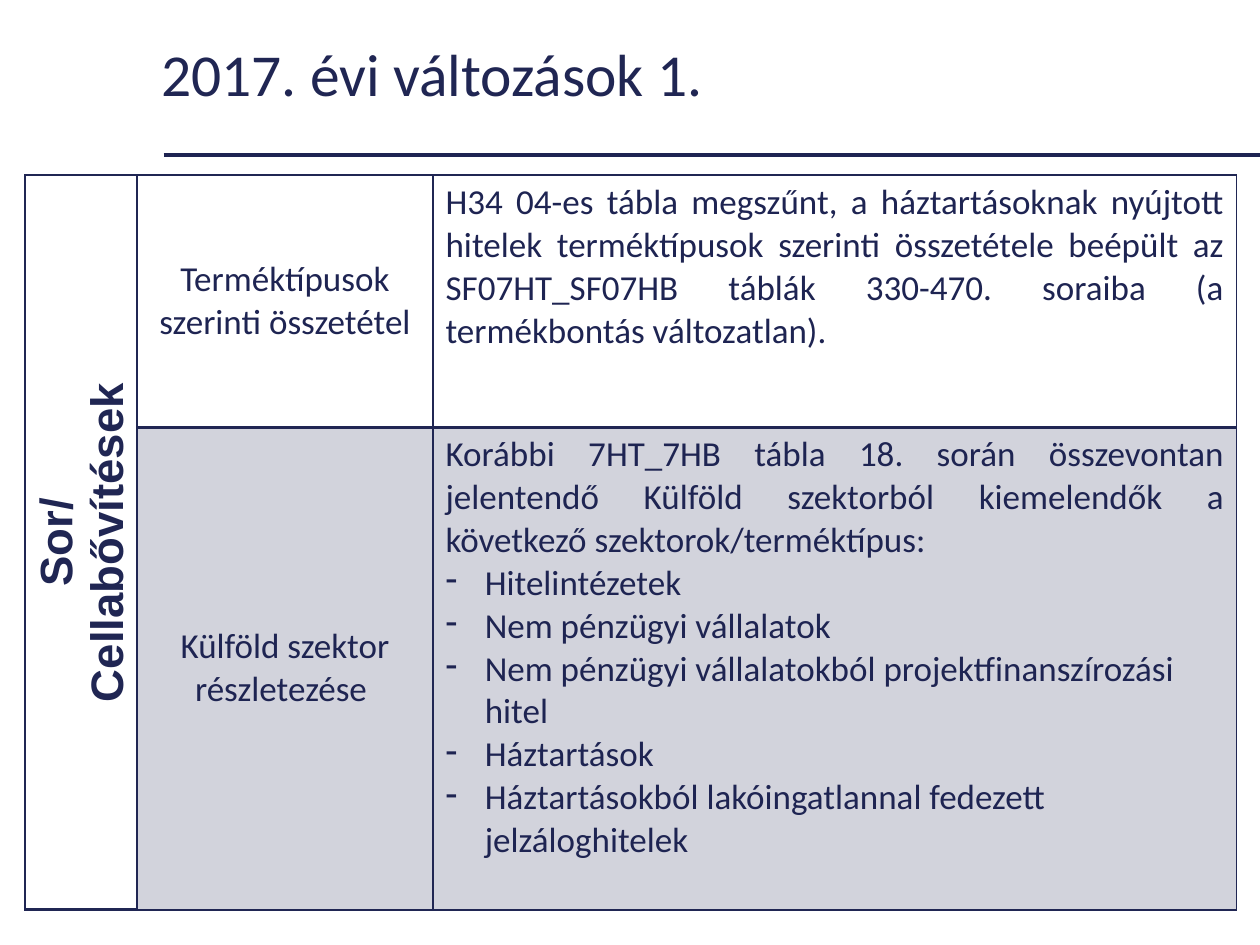
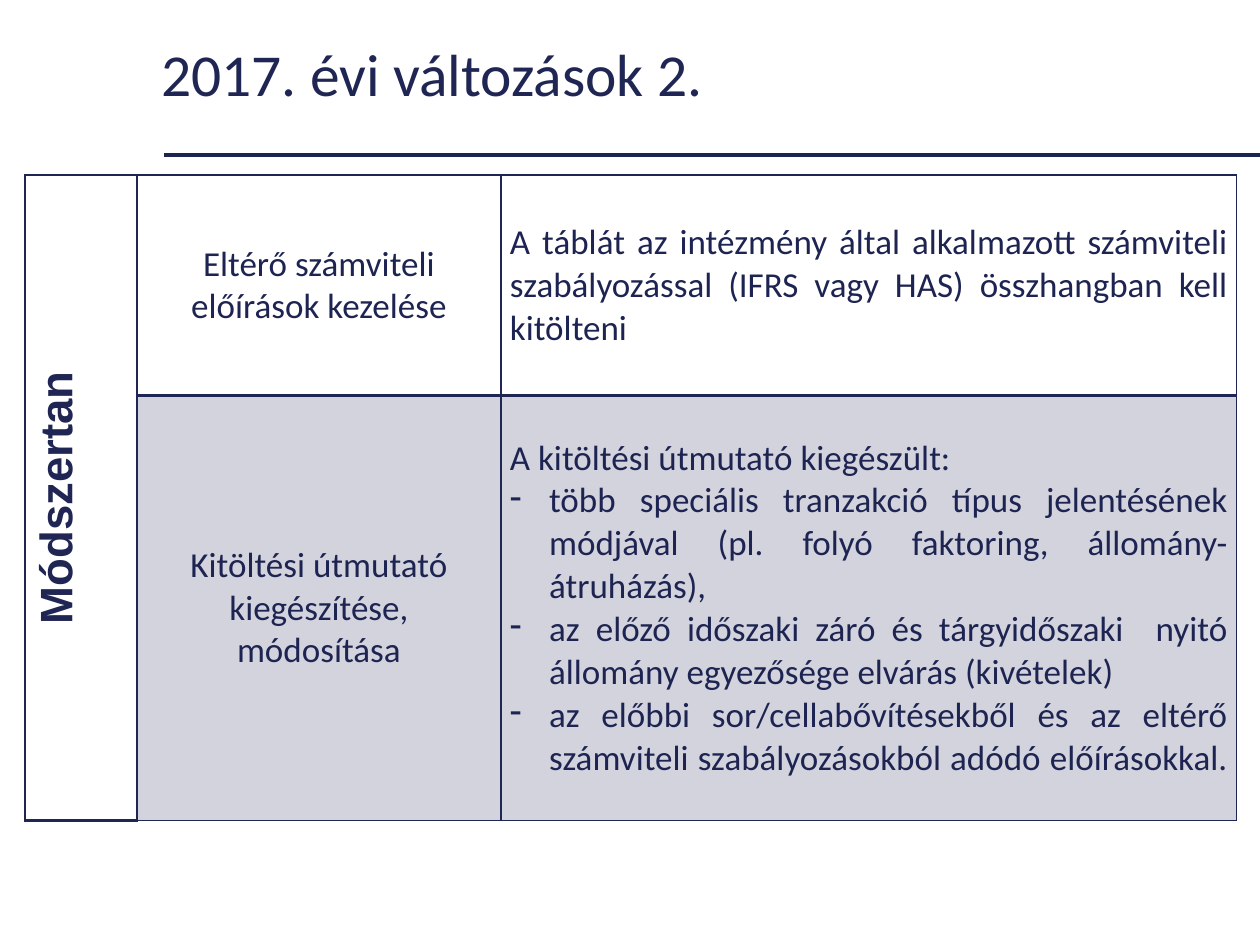
from lxml import etree
from pptx import Presentation
from pptx.dml.color import RGBColor
from pptx.enum import shapes, text
from pptx.oxml import ns
from pptx.util import Cm, Pt

NAVY = RGBColor(0x20, 0x26, 0x53)
INK = RGBColor(0x1E, 0x24, 0x52)
TINT_ALPHA = 20
CENTER = text.PP_ALIGN.CENTER
JUSTIFY = text.PP_ALIGN.JUSTIFY
LEFT = text.PP_ALIGN.LEFT
TOP = text.MSO_ANCHOR.TOP
MIDDLE = text.MSO_ANCHOR.MIDDLE

ROW_CHANGES = [
    ("Terméktípusok szerinti összetétel",
     "H34 04-es tábla megszűnt, a háztartásoknak nyújtott hitelek terméktípusok szerinti "
     "összetétele beépült az SF07HT_SF07HB táblák 330-470. soraiba (a termékbontás változatlan).",
     []),
    ("Külföld szektor részletezése ",
     "Korábbi 7HT_7HB tábla 18. során összevontan jelentendő Külföld szektorból kiemelendők "
     "a következő szektorok/terméktípus:",
     ["Hitelintézetek",
      "Nem pénzügyi vállalatok",
      "Nem pénzügyi vállalatokból projektfinanszírozási hitel",
      "Háztartások",
      "Háztartásokból lakóingatlannal fedezett jelzáloghitelek"]),
]
METHOD_CHANGES = [
    ("Eltérő számviteli előírások kezelése",
     "A táblát az intézmény által alkalmazott számviteli szabályozással (IFRS vagy HAS) "
     "összhangban kell kitölteni",
     []),
    ("Kitöltési útmutató kiegészítése, módosítása",
     "A kitöltési útmutató kiegészült: ",
     ["több speciális tranzakció típus jelentésének módjával (pl. folyó faktoring, "
      "állomány-átruházás), ",
      "az előző időszaki záró és tárgyidőszaki  nyitó állomány egyezősége elvárás (kivételek) ",
      "az előbbi sor/cellabővítésekből és az eltérő számviteli szabályozásokból adódó "
      "előírásokkal. "]),
]


def sub(parent, tag, **attributes):
    """Append a DrawingML element to a parent."""
    return etree.SubElement(parent, ns.qn(tag), **attributes)


def style_runs(paragraph, size, font, color, bold=False):
    """Format every run of a paragraph."""
    for run in paragraph.runs:
        run.font.size = Pt(size)
        run.font.name = font
        run.font.bold = bold
        run.font.color.rgb = color


def add_dash(paragraph):
    """Give a paragraph a hanging dash."""
    properties = paragraph._p.get_or_add_pPr()
    properties.set("marL", str(Cm(0.79)))
    properties.set("indent", str(-Cm(0.79)))
    sub(properties, "a:buChar", char="-")


def add_title(slide, title):
    """Place and format the slide title with the rule below it."""
    heading = slide.shapes.title
    heading.left, heading.top, heading.width, heading.height = Cm(3), Cm(0.5), Cm(20.7), Cm(2.1)
    frame = heading.text_frame
    frame.text = title
    frame.auto_size = text.MSO_AUTO_SIZE.NONE
    frame.vertical_anchor = MIDDLE
    paragraph = frame.paragraphs[0]
    paragraph.alignment = LEFT
    paragraph.line_spacing = 0.9
    style_runs(paragraph, 34, "Calibri", NAVY)
    rule = slide.shapes.add_connector(
        shapes.MSO_CONNECTOR.STRAIGHT, Cm(3.3), Cm(3.12), Cm(25.4), Cm(3.12))
    rule.line.color.rgb = INK
    rule.line.width = Pt(2.25)
    sub(rule._element.spPr, "a:effectLst")


def style_cell(cell, bottom_width=1, tinted=False):
    """Set the fill and the four borders of a cell."""
    properties = cell._tc.get_or_add_tcPr()
    if tinted:
        cell.fill.solid()
        cell.fill.fore_color.rgb = NAVY
        color = properties.find(".//" + ns.qn("a:srgbClr"))
        sub(color, "a:alpha", val=str(TINT_ALPHA * 1000))
    else:
        cell.fill.background()
    for index, side in enumerate("LRTB"):
        width = bottom_width if side == "B" else 1
        border = etree.Element(ns.qn("a:ln" + side), w=str(Pt(width)))
        sub(sub(border, "a:solidFill"), "a:srgbClr", val=str(NAVY))
        properties.insert(index, border)


def fill_cell(cell, content, alignment, anchor):
    """Write body text into a cell."""
    cell.text_frame.text = content
    cell.vertical_anchor = anchor
    paragraph = cell.text_frame.paragraphs[0]
    paragraph.alignment = alignment
    style_runs(paragraph, 20, "Calibri", INK)


def add_dash_list(cell, items, alignment):
    """Add dashed items below the text of a cell."""
    for item in items:
        paragraph = cell.text_frame.add_paragraph()
        paragraph.text = item
        paragraph.alignment = alignment
        add_dash(paragraph)
        style_runs(paragraph, 20, "Calibri", INK)


def fill_group(cell, group):
    """Write the upright group heading of the first column."""
    cell.text_frame.text = group
    cell.vertical_anchor = MIDDLE
    cell._tc.get_or_add_tcPr().set("vert", "vert270")
    for paragraph in cell.text_frame.paragraphs:
        paragraph.alignment = CENTER
        style_runs(paragraph, 26, "Arial", NAVY, bold=True)


def add_changes(slide, group, changes, widths, heights, anchor, item_alignment, tight=False):
    """Add the table of changes under one group heading."""
    table = slide.shapes.add_table(
        len(changes), len(widths), Cm(0.5), Cm(3.53), Cm(sum(widths)), Cm(sum(heights))).table
    table.first_row = table.horz_banding = False
    for column, width in zip(table.columns, widths):
        column.width = Cm(width)
    for row, height in zip(table.rows, heights):
        row.height = Cm(height)
    table.cell(0, 0).merge(table.cell(len(changes) - 1, 0))
    fill_group(table.cell(0, 0), group)
    for index, (topic, detail, items) in enumerate(changes):
        tinted = index % 2 == 1
        style_cell(table.cell(index, 0), bottom_width=2)
        topic_cell, detail_cell = table.cell(index, 1), table.cell(index, 2)
        fill_cell(topic_cell, topic, CENTER, MIDDLE)
        fill_cell(detail_cell, detail, JUSTIFY, anchor)
        add_dash_list(detail_cell, items, item_alignment)
        for cell in (topic_cell, detail_cell):
            style_cell(cell, 1 if tinted else 2, tinted)
            if tight:
                cell.margin_left = cell.margin_right = Cm(0.18)
                cell.margin_top = cell.margin_bottom = 0


def main():
    """Build and save the two slides."""
    deck = Presentation()
    deck.slide_width, deck.slide_height = Cm(25.4), Cm(19.05)
    title_only = deck.slide_layouts[5]

    row_slide = deck.slides.add_slide(title_only)
    add_title(row_slide, "2017. évi változások 1.")
    add_changes(row_slide, "Sor/\nCellabővítések", ROW_CHANGES,
                (2.26, 5.97, 16.2), (5.08, 9.73), TOP, LEFT)

    method_slide = deck.slides.add_slide(title_only)
    add_title(method_slide, "2017. évi változások 2.")
    add_changes(method_slide, "Módszertan", METHOD_CHANGES,
                (2.26, 7.34, 14.83), (4.45, 8.56), MIDDLE, JUSTIFY, tight=True)

    deck.save("out.pptx")


if __name__ == "__main__":
    main()
